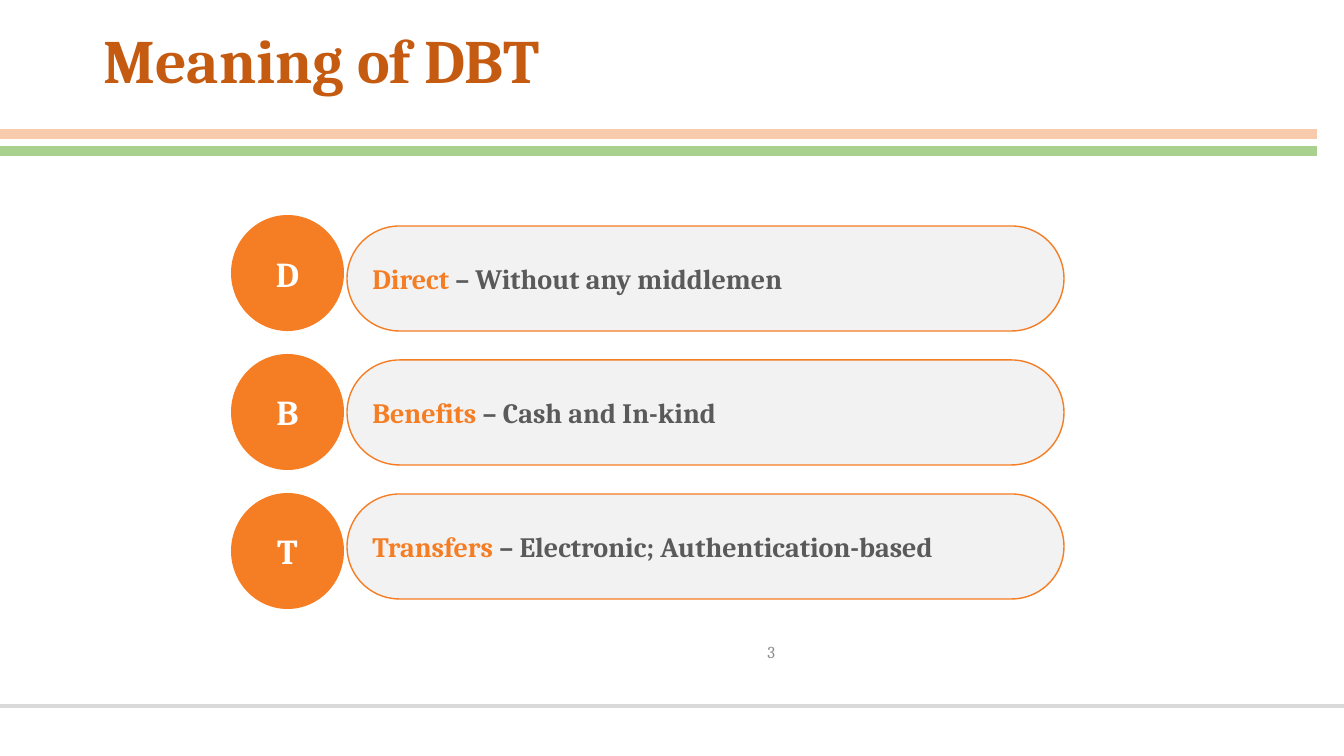
"""Build the slide that spells out the meaning of DBT."""
from lxml import etree
from pptx import Presentation
from pptx.dml.color import RGBColor
from pptx.enum import shapes, text
from pptx.oxml.ns import qn
from pptx.util import Emu, Pt

TITLE = "Meaning of DBT"
PAGE_NUMBER = "3"
TERMS = [
    ("Direct ", "– Without any middlemen"),
    ("Benefits ", "– Cash and In-kind"),
    ("Transfers ", "– Electronic; Authentication-based"),
]

FONT = "Cambria"
RUST = RGBColor(0xC5, 0x5A, 0x11)
ORANGE = RGBColor(0xF5, 0x7D, 0x23)
PEACH = RGBColor(0xF8, 0xCB, 0xAD)
GREEN = RGBColor(0xA9, 0xD1, 0x8E)
RULE_GRAY = RGBColor(0xD9, 0xD9, 0xD9)
PILL_GRAY = RGBColor(0xE6, 0xE7, 0xE8)
TEXT_GRAY = RGBColor(0x5A, 0x5A, 0x5A)
NUMBER_GRAY = RGBColor(0x8C, 0x8C, 0x8C)
WHITE = RGBColor(0xFF, 0xFF, 0xFF)

WIDTH, HEIGHT = 1344, 756
RULES = [(134, 1317, PEACH, 6.75), (151, 1317, GREEN, 6.75), (706, WIDTH, RULE_GRAY, 2.75)]
TITLE_BOX = (93, 11, 1159, 105)
NUMBER_BOX = (558, 632, 227, 40)
CIRCLE_LEFT, CIRCLE_TOP, CIRCLE_WIDTH, CIRCLE_HEIGHT, CIRCLE_STEP = 231, 215, 113, 116, 139
PILL_LEFT, PILL_TOP, PILL_WIDTH, PILL_HEIGHT, PILL_STEP = 347, 226, 717, 105, 134


def px(length):
    """Turn pixels into EMU."""
    return Emu(round(length * 914400 / 100.8))


def write(shape, parts, size, bold, align):
    """Fill a shape with one paragraph of coloured parts."""
    frame = shape.text_frame
    frame.word_wrap = True
    frame.vertical_anchor = text.MSO_ANCHOR.MIDDLE
    para = frame.paragraphs[0]
    para.alignment = align
    for words, color in parts:
        span = para.add_run()
        span.text = words
        span.font.name = FONT
        span.font.size = Pt(size)
        span.font.bold = bold
        span.font.color.rgb = color
    return para


def add_rule(page, y, right, color, weight):
    """Draw a horizontal rule from the left edge."""
    rule = page.shapes.add_connector(shapes.MSO_CONNECTOR.STRAIGHT, 0, px(y), px(right), px(y))
    rule.line.color.rgb = color
    rule.line.width = Pt(weight)
    etree.SubElement(rule._element.spPr, qn("a:effectLst"))


def add_filled(page, kind, box, color):
    """Add a flat preset shape."""
    shape = page.shapes.add_shape(kind, *map(px, box))
    shape.shadow.inherit = False
    shape.fill.solid()
    shape.fill.fore_color.rgb = color
    return shape


def add_term(page, index, word, meaning):
    """Add one pill and its initial in a circle."""
    box = (PILL_LEFT, PILL_TOP + index * PILL_STEP, PILL_WIDTH, PILL_HEIGHT)
    pill = add_filled(page, shapes.MSO_SHAPE.ROUNDED_RECTANGLE, box, PILL_GRAY)
    pill.adjustments[0] = 0.5
    pill.line.color.rgb = ORANGE
    pill.line.width = Pt(1)
    tint = pill._element.spPr.find(qn("a:solidFill"))[0]
    etree.SubElement(tint, qn("a:alpha"), val="50000")
    write(pill, [(word, ORANGE), (meaning, TEXT_GRAY)], 20, True, text.PP_ALIGN.LEFT)

    box = (CIRCLE_LEFT, CIRCLE_TOP + index * CIRCLE_STEP, CIRCLE_WIDTH, CIRCLE_HEIGHT)
    circle = add_filled(page, shapes.MSO_SHAPE.OVAL, box, ORANGE)
    circle.line.fill.background()
    write(circle, [(word[0], WHITE)], 25, True, text.PP_ALIGN.CENTER)


def main():
    """Build and save the deck."""
    deck = Presentation()
    deck.slide_width, deck.slide_height = px(WIDTH), px(HEIGHT)
    page = deck.slides.add_slide(deck.slide_layouts[5])
    for rule in RULES:
        add_rule(page, *rule)

    title = page.shapes.title
    title.left, title.top, title.width, title.height = map(px, TITLE_BOX)
    para = write(title, [(TITLE, RUST)], 44, True, text.PP_ALIGN.LEFT)
    para.line_spacing = 0.9

    number = page.shapes.add_textbox(*map(px, NUMBER_BOX))
    write(number, [(PAGE_NUMBER, NUMBER_GRAY)], 12, False, text.PP_ALIGN.RIGHT)

    for index, (word, meaning) in enumerate(TERMS):
        add_term(page, index, word, meaning)
    deck.save("out.pptx")


if __name__ == "__main__":
    main()
